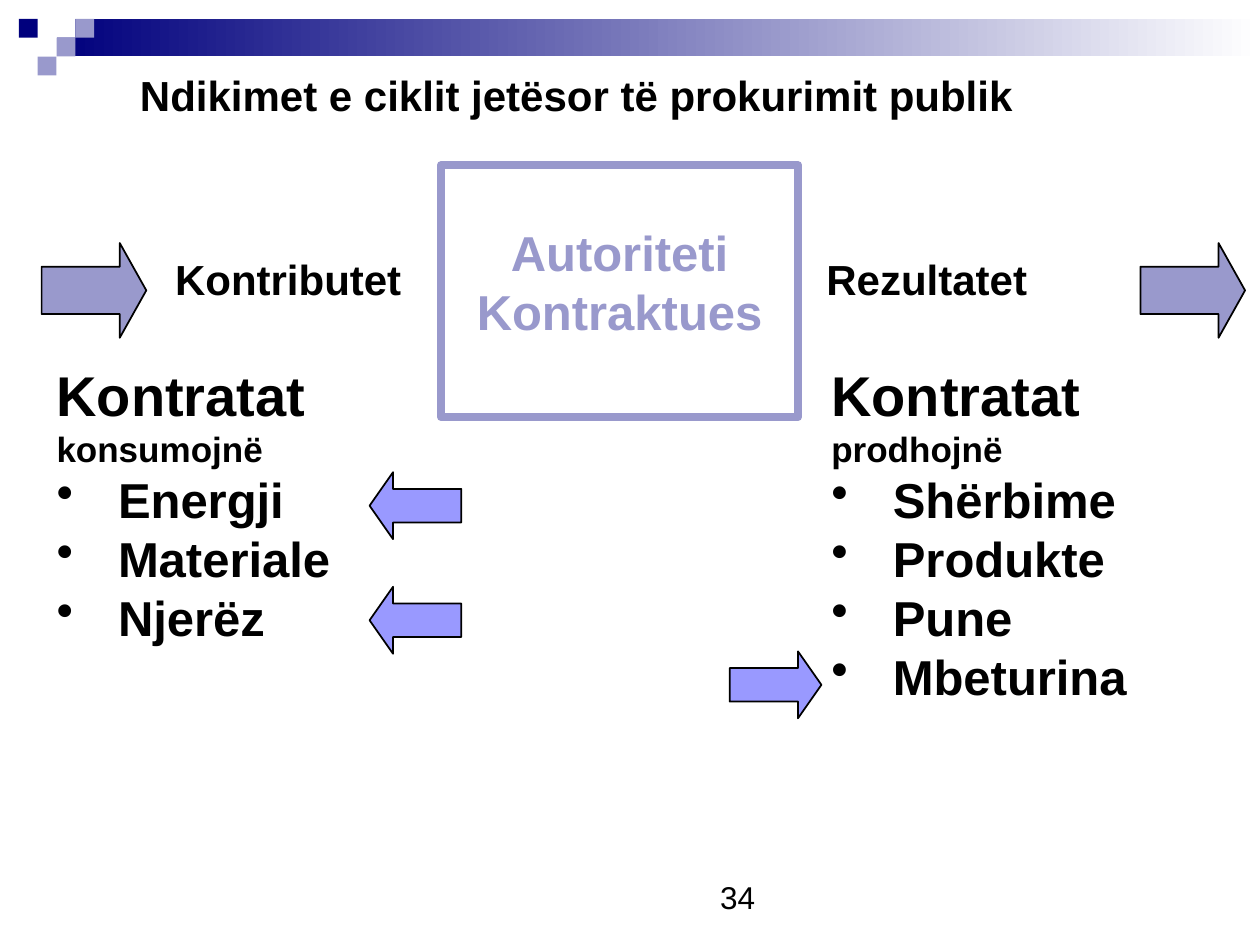
import dataclasses

import pptx
import pptx.dml.color
import pptx.enum.shapes
import pptx.enum.text
import pptx.util
from lxml import etree
from pptx.oxml.ns import qn

Cm = pptx.util.Cm
Pt = pptx.util.Pt
Shape = pptx.enum.shapes.MSO_SHAPE
Align = pptx.enum.text.PP_ALIGN
Fit = pptx.enum.text.MSO_AUTO_SIZE
Anchor = pptx.enum.text.MSO_ANCHOR


def shade(code):
    return pptx.dml.color.RGBColor.from_string(code)


@dataclasses.dataclass(frozen=True)
class Theme:
    font: str = "Arial"
    ink: object = shade("000000")
    paper: object = shade("FFFFFF")
    navy: object = shade("00007D")
    lilac: object = shade("9999CC")
    violet: object = shade("9999FF")
    head: int = 32
    item: int = 28
    label: int = 24
    verb: int = 20
    page: int = 18


THEME = Theme()


def style(para, size, color=THEME.ink, bold=True, align=Align.LEFT):
    para.alignment = align
    for run in para.runs:
        font = run.font
        font.name, font.size, font.bold = THEME.font, Pt(size), bold
        font.color.rgb = color


def fit(frame, wrap=False):
    frame.word_wrap = wrap
    frame.auto_size = Fit.SHAPE_TO_FIT_TEXT
    frame.vertical_anchor = Anchor.TOP


def add_text(slide, box, text, wrap=False):
    frame = slide.shapes.add_textbox(*map(Cm, box)).text_frame
    fit(frame, wrap)
    frame.text = text
    return frame


def add_form(slide, kind, box, fill=None, line=None, width=1):
    form = slide.shapes.add_shape(kind, *map(Cm, box))
    form.shadow.inherit = False
    if fill is None:
        form.fill.background()
    else:
        form.fill.solid()
        form.fill.fore_color.rgb = fill
    if line is None:
        form.line.fill.background()
    else:
        form.line.color.rgb = line
        form.line.width = Pt(width)
    return form


def add_band(slide, box):
    """Fading bar with a stair of small squares at its left end."""
    left, top, wide, high = box
    side = high / 2
    bar = add_form(slide, Shape.RECTANGLE, box)
    bar.fill.gradient()
    bar.fill.gradient_angle = 0
    for stop, color in zip(bar.fill.gradient_stops, (THEME.navy, THEME.paper)):
        stop.color.rgb = color
    stairs = [(0, 0, THEME.paper), (-2, 0, THEME.navy), (1, 0, THEME.lilac),
              (0, 1, THEME.lilac), (-1, 2, THEME.lilac)]
    for col, row, color in stairs:
        spot = (left + col * side, top + row * side, side, side)
        add_form(slide, Shape.RECTANGLE, spot, color)


def set_title(slide, box, text):
    title = slide.shapes.title
    title.left, title.top, title.width, title.height = map(Cm, box)
    fit(title.text_frame)
    title.text_frame.text = text
    style(title.text_frame.paragraphs[0], THEME.label, align=Align.CENTER)


def add_label(slide, box, text, size=THEME.label, bold=True):
    frame = add_text(slide, box, text)
    style(frame.paragraphs[0], size, bold=bold)


def add_centre(slide, box, text):
    left, top, wide, high = box
    add_form(slide, Shape.RECTANGLE, box, line=THEME.lilac, width=4.5)
    inner = (left + 0.1, top + 1.04, wide - 0.2, 2.64)
    frame = add_text(slide, inner, text, wrap=True)
    style(frame.paragraphs[0], THEME.item, THEME.lilac, align=Align.CENTER)


def add_list(slide, box, verb, items):
    frame = add_text(slide, box, "\n".join(["Kontratat", verb, *items]))
    head, second, *points = frame.paragraphs
    style(head, THEME.head)
    style(second, THEME.verb)
    for point in points:
        style(point, THEME.item)
        props = point._p.get_or_add_pPr()
        props.set("marL", str(Cm(1.24)))
        props.set("indent", str(-Cm(1.24)))
        etree.SubElement(props, qn("a:buChar")).set("char", "•")


def add_arrow(slide, kind, box, color, tip, turn=0):
    arrow = add_form(slide, kind, box, color, THEME.ink)
    arrow.adjustments[0], arrow.adjustments[1] = 0.5, tip
    arrow.rotation = turn


def add_flow(slide):
    """Large arrows into and out of the process, small ones by the lists."""
    for left in (0.84, 22.99):
        add_arrow(slide, Shape.RIGHT_ARROW, (left, 4.9, 2.11, 1.91),
                  THEME.lilac, 0.28)
    for left, top, turn in ((14.96, 12.88, 270), (7.7, 11.58, 90), (7.7, 9.27, 90)):
        add_arrow(slide, Shape.DOWN_ARROW, (left, top, 1.35, 1.85),
                  THEME.violet, 0.35, turn)


def main():
    deck = pptx.Presentation()
    deck.slide_width, deck.slide_height = Cm(25.4), Cm(19.05)
    slide = deck.slides.add_slide(deck.slide_layouts.get_by_name("Title Only"))
    add_band(slide, (1.14, 0.38, 24.26, 0.76))
    add_label(slide, (14.27, 17.58, 1.63, 1.02), "34", THEME.page, bold=False)
    set_title(slide, (2.49, 1.27, 18.26, 1.27),
              "Ndikimet e ciklit jetësor të prokurimit publik")
    add_list(slide, (0.89, 7.14, 6.1, 7.44), "konsumojnë",
             ["Energji", "Materiale", "Njerëz"])
    add_label(slide, (3.28, 4.98, 5.11, 1.27), "Kontributet")
    add_centre(slide, (8.89, 3.33, 7.2, 5.08), "Autoriteti Kontraktues")
    add_list(slide, (16.51, 7.14, 6.81, 7.26), "prodhojnë",
             ["Shërbime", "Produkte", "Pune", "Mbeturina"])
    add_label(slide, (16.41, 4.98, 4.6, 1.27), "Rezultatet")
    add_flow(slide)
    deck.save("out.pptx")


if __name__ == "__main__":
    main()
